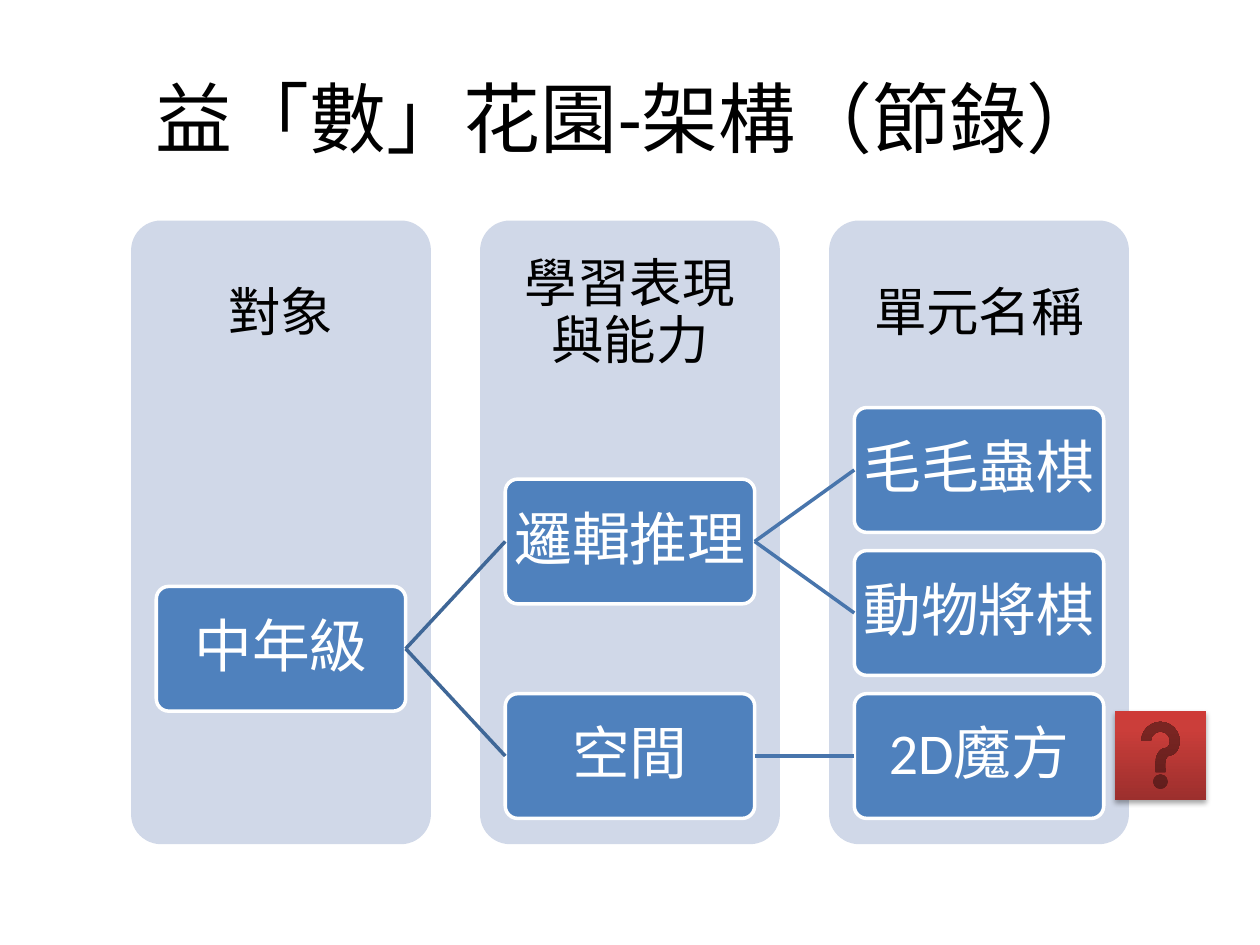
from lxml.etree import SubElement, fromstring
from pptx import Presentation
from pptx.dml.color import RGBColor as RGB
from pptx.enum.shapes import MSO_CONNECTOR as CONN, MSO_SHAPE as SHAPE
from pptx.enum.text import MSO_ANCHOR as ANCHOR, PP_ALIGN as ALIGN
from pptx.oxml.ns import qn
from pptx.util import Inches, Pt

COLORS = {
    "black": "000000", "white": "FFFFFF", "panel": "D0D8E8", "node": "4F81BD",
    "link1": "3F6797", "link2": "4875AC",
    "red_dark": "9C2F2D", "red_mid": "CB3E3A", "red": "CE3B37",
}
COLS, ROWS = 100, 75
PITCH_X, PITCH_Y = 27.7, 11.35
NODE_X, NODE_Y, NODE_W, NODE_H = 12.4, 32.35, 19.8, 9.9
PANEL_X, PANEL_Y, PANEL_W, PANEL_H = 10.4, 17.5, 23.8, 49.5
HEADING_H = 14.85

HEADINGS = ["對象", "學習表現與能力", "單元名稱"]
NODES = [
    ("中年級", 0, 1.25), ("邏輯推理", 1, 0.5), ("空間", 1, 2),
    ("毛毛蟲棋", 2, 0), ("動物將棋", 2, 1), ("2D魔方", 2, 2),
]
LINKS = [
    ("中年級", "邏輯推理", "link1"), ("中年級", "空間", "link1"),
    ("邏輯推理", "毛毛蟲棋", "link2"), ("邏輯推理", "動物將棋", "link2"),
    ("空間", "2D魔方", "link2"),
]


def color(name):
    return RGB.from_string(COLORS[name])


def write(sp, text, size=33, fill="black", inset=0.02, spacing=0.9, font="Calibri"):
    tf = sp.text_frame
    tf.word_wrap = True
    tf.vertical_anchor = ANCHOR.MIDDLE
    tf.margin_left = tf.margin_right = tf.margin_top = tf.margin_bottom = Inches(inset)
    p = tf.paragraphs[0]
    p.alignment = ALIGN.CENTER
    p.line_spacing = spacing
    r = p.add_run()
    r.text = text
    r.font.name = font
    r.font.size = Pt(size)
    r.font.color.rgb = color(fill)


class Deck:
    def __init__(self, width=10, height=7.5):
        self.prs = Presentation()
        self.prs.slide_width = Inches(width)
        self.prs.slide_height = Inches(height)
        self.s = self.prs.slides.add_slide(self.prs.slide_layouts[6])

    def at(self, x, y, w, h):
        dx, dy = self.prs.slide_width / COLS, self.prs.slide_height / ROWS
        return [round(v) for v in (x * dx, y * dy, w * dx, h * dy)]

    def text(self, text, *box, **style):
        sp = self.s.shapes.add_textbox(*self.at(*box))
        write(sp, text, **style)

    def round_box(self, fill, *box, line=None):
        sp = self.s.shapes.add_shape(SHAPE.ROUNDED_RECTANGLE, *self.at(*box))
        sp.adjustments[0] = 0.1
        sp.shadow.inherit = False
        sp.fill.solid()
        sp.fill.fore_color.rgb = color(fill)
        if line:
            sp.line.color.rgb = color(line)
            sp.line.width = Pt(2)
        else:
            sp.line.fill.background()
        return sp

    def panel(self, heading, col):
        x = PANEL_X + col * PITCH_X
        self.round_box("panel", x, PANEL_Y, PANEL_W, PANEL_H)
        self.text(heading, x, PANEL_Y, PANEL_W, HEADING_H, size=30, inset=0.23)

    def node(self, text, col, row):
        sp = self.round_box("node", NODE_X + col * PITCH_X, NODE_Y + row * PITCH_Y,
                            NODE_W, NODE_H, line="white")
        write(sp, text, fill="white")
        return sp

    def link(self, start, end, line):
        c = self.s.shapes.add_connector(CONN.STRAIGHT, 0, 0, 0, 0)
        c.begin_connect(start, 3)
        c.end_connect(end, 1)
        c.line.color.rgb = color(line)
        c.line.width = Pt(2)
        SubElement(c._element.spPr, qn("a:effectLst"))

    def help_button(self, *box):
        sp = self.s.shapes.add_shape(SHAPE.ACTION_BUTTON_HELP, *self.at(*box))
        sp.shadow.inherit = False
        sp.line.fill.background()
        sp.fill.gradient()
        sp.fill.gradient_angle = 90
        spPr = sp._element.spPr
        stops = spPr.find(qn("a:gradFill")).find(qn("a:gsLst"))
        for gs in list(stops):
            stops.remove(gs)
        for pos, name in ((0, "red_dark"), (80, "red_mid"), (100, "red")):
            gs = SubElement(stops, qn("a:gs"), pos=str(pos * 1000))
            SubElement(gs, qn("a:srgbClr"), val=COLORS[name])
        spPr.find(qn("a:effectLst")).append(fromstring(
            '<a:outerShdw xmlns:a="http://schemas.openxmlformats.org/drawingml/2006/main" '
            'blurRad="40000" dist="23000" dir="5400000" rotWithShape="0">'
            f'<a:srgbClr val="{COLORS["black"]}"><a:alpha val="35000"/></a:srgbClr>'
            '</a:outerShdw>'))


def main():
    deck = Deck()
    deck.text("益「數」花園-架構（節錄）", 5, 3, 90, 12.5, size=44, inset=0.05, spacing=1.0)
    for col, heading in enumerate(HEADINGS):
        deck.panel(heading, col)
    nodes = {text: deck.node(text, col, row) for text, col, row in NODES}
    for start, end, line in LINKS:
        deck.link(nodes[start], nodes[end], line)
    deck.help_button(88.5, 56.4, 7.2, 7.1)
    deck.prs.save("out.pptx")


if __name__ == "__main__":
    main()
